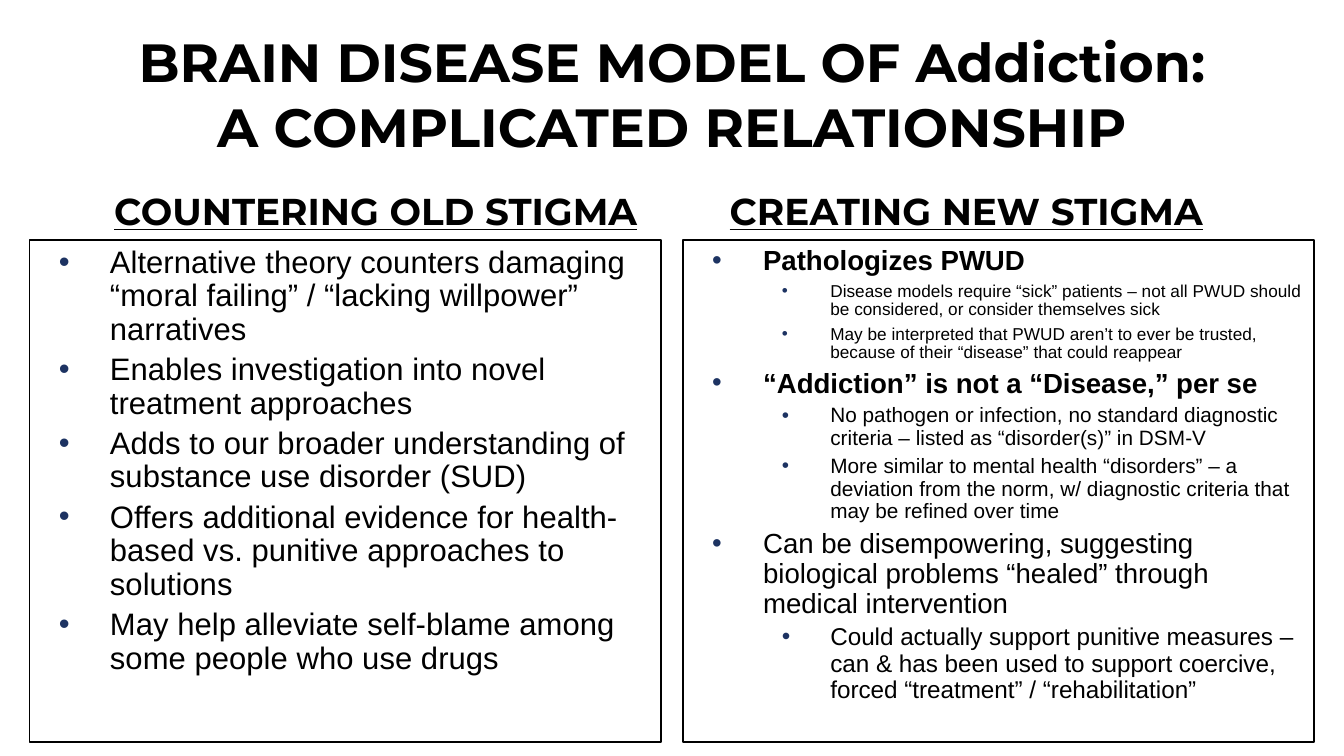
import pptx
import pptx.util
import pptx.dml.color
import pptx.enum.shapes
import pptx.enum.text
import pptx.oxml.ns
from lxml import etree

Inches, Pt = pptx.util.Inches, pptx.util.Pt
Align = pptx.enum.text.PP_ALIGN
Anchor = pptx.enum.text.MSO_ANCHOR


def color(text):
    return pptx.dml.color.RGBColor.from_string(text)


def write(para, text, face, size, bold=False, line=False):
    run = para.add_run()
    run.text = text
    font = run.font
    font.name, font.size = face, Pt(size)
    font.bold, font.underline = bold, line
    font.color.rgb = color("000000")


# Widescreen slide, 16 by 9
wide, high = 10, 10 * 9 / 16
deck = pptx.Presentation()
deck.slide_width, deck.slide_height = Inches(wide), Inches(high)
slide = deck.slides.add_slide(deck.slide_layouts[6])

# Grid: two columns mirrored about the middle of the slide
edge, col = 0.22, 4.7
top, tall = high * 0.3172, 3.74
head, span = 0.52, 4.42
lefts = [edge, wide - edge - col]

# Title
box = slide.shapes.add_textbox(Inches(0.5), Inches(high * 0.04), Inches(9), Inches(high / 6))
frame = box.text_frame
frame.word_wrap = True
frame.vertical_anchor = Anchor.MIDDLE
para = frame.paragraphs[0]
para.alignment = Align.CENTER
write(para, "BRAIN DISEASE MODEL OF Addiction:", "Montserrat", 28.8, True)
para.add_line_break()
write(para, "A COMPLICATED RELATIONSHIP", "Montserrat", 28.8, True)

# Column text: level, size, bold, words
old = [(0, 16.65, False, text) for text in (
    "Alternative theory counters damaging “moral failing” / “lacking willpower” narratives",
    "Enables investigation into novel treatment approaches",
    "Adds to our broader understanding of substance use disorder (SUD)",
    "Offers additional evidence for health-based vs. punitive approaches to solutions",
    "May help alleviate self-blame among some people who use drugs",
)]
new = [
    (0, 14.8, True, "Pathologizes PWUD"),
    (1, 9.25, False, "Disease models require “sick” patients – not all PWUD should be "
     "considered, or consider themselves sick"),
    (1, 9.25, False, "May be interpreted that PWUD aren’t to ever be trusted, because of "
     "their “disease” that could reappear"),
    (0, 14.8, True, "“Addiction” is not a “Disease,” per se"),
    (1, 11.1, False, "No pathogen or infection, no standard diagnostic criteria – listed as "
     "“disorder(s)” in DSM-V"),
    (1, 11.1, False, "More similar to mental health “disorders” – a deviation from the norm, "
     "w/ diagnostic criteria that may be refined over time"),
    (0, 14.8, False, "Can be disempowering, suggesting biological problems “healed” through "
     "medical intervention"),
    (1, 12.95, False, "Could actually support punitive measures – can & has been used to "
     "support coercive, forced “treatment” / “rehabilitation”"),
]
# Left margin, first-line indent and space before, by level
steps = [(0.5, -0.38, 3.6), (1, -0.36, 3.2)]
cols = [("COUNTERING OLD STIGMA", 0.5, old), ("CREATING NEW STIGMA", lefts[1], new)]

for left, (title, start, items) in zip(lefts, cols):
    # Heading
    box = slide.shapes.add_textbox(Inches(start), Inches(top - head), Inches(span), Inches(head))
    frame = box.text_frame
    frame.word_wrap = True
    frame.vertical_anchor = Anchor.BOTTOM
    para = frame.paragraphs[0]
    prop = para._p.get_or_add_pPr()
    prop.set("marL", str(Inches(0.5)))
    prop.set("indent", str(Inches(-0.25)))
    write(para, title, "Montserrat", 20, True, True)

    # Framed list
    box = slide.shapes.add_shape(pptx.enum.shapes.MSO_SHAPE.RECTANGLE,
                                 Inches(left), Inches(top), Inches(col), Inches(tall))
    box.shadow.inherit = False
    box.fill.background()
    box.line.color.rgb = color("000000")
    box.line.width = Pt(1)
    frame = box.text_frame
    frame.word_wrap = True
    frame.vertical_anchor = Anchor.TOP
    for i, (level, size, bold, text) in enumerate(items):
        para = frame.add_paragraph() if i else frame.paragraphs[0]
        margin, dent, gap = steps[level]
        para.level = level
        para.alignment = Align.LEFT
        para.line_spacing = 0.9
        para.space_before = Pt(gap if i else 0)
        prop = para._p.get_or_add_pPr()
        prop.set("marL", str(Inches(margin)))
        prop.set("indent", str(Inches(dent)))
        tint = etree.SubElement(prop, pptx.oxml.ns.qn("a:buClr"))
        etree.SubElement(tint, pptx.oxml.ns.qn("a:srgbClr"), val="1D3362")
        etree.SubElement(prop, pptx.oxml.ns.qn("a:buFont"), typeface="Arial")
        etree.SubElement(prop, pptx.oxml.ns.qn("a:buChar"), char="•")
        write(para, text, "Arial", size, bold)

deck.save("out.pptx")
